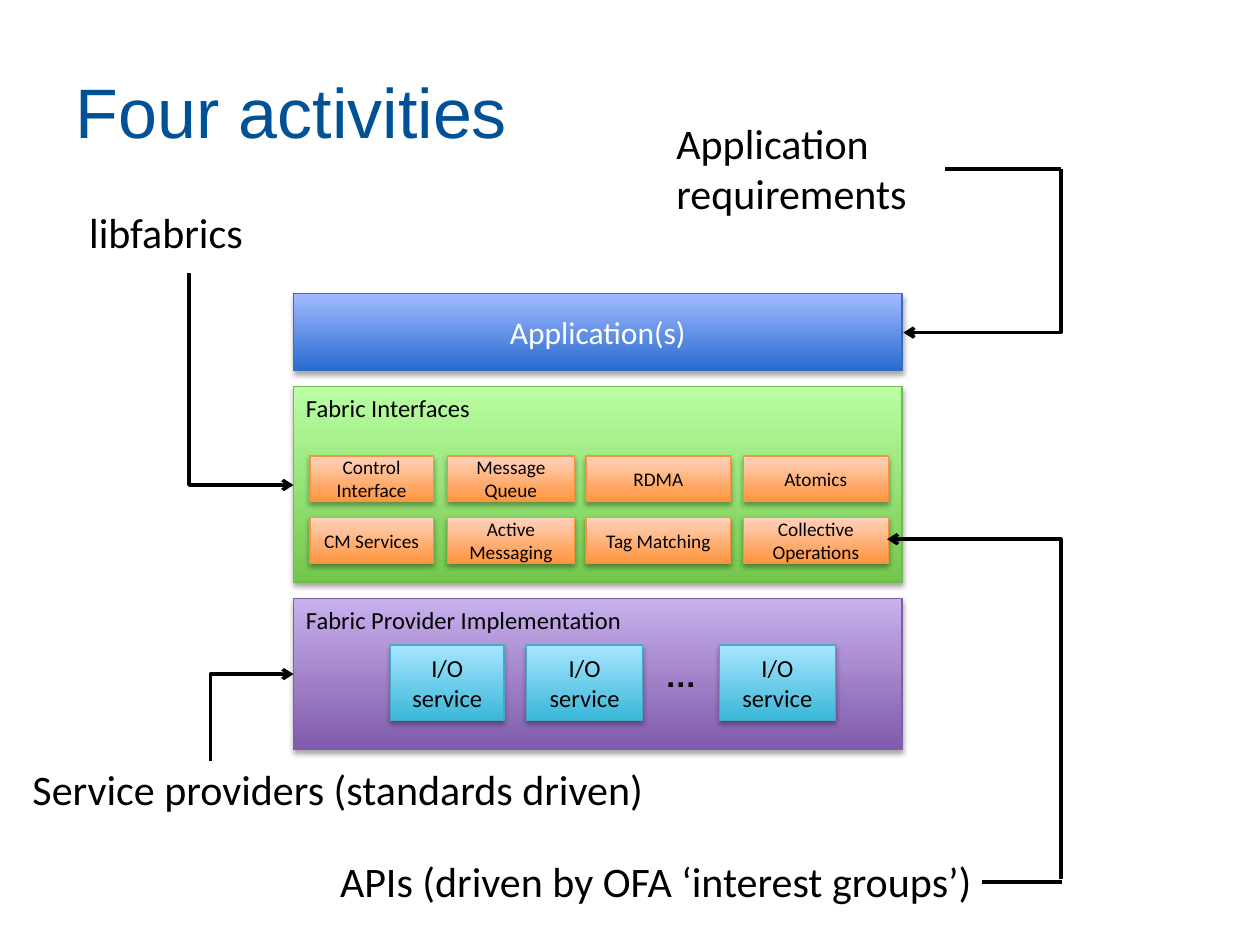
from lxml import etree
from pptx import Presentation
from pptx.dml.color import RGBColor
from pptx.enum.shapes import MSO_CONNECTOR as CONN, MSO_SHAPE
from pptx.enum.text import MSO_ANCHOR as ANCHOR, PP_ALIGN as ALIGN
from pptx.oxml import parse_xml
from pptx.oxml.ns import nsdecls, qn
from pptx.util import Inches, Pt

TITLE = "Four activities"
LABELS = [
    ("libfabrics", 0.61, 1.59, 1.73, 0.58),
    ("APIs (driven by OFA ‘interest groups’)", 2.6, 6.74, 5.29, 0.7),
    ("Application requirements", 5.27, 0.88, 2.23, 0.92),
    ("Service providers (standards driven)", 0.16, 6.01, 7.07, 0.58),
]
STYLES = {
    "application": ("296BD0", "A2BAFF", "386CBC"),
    "interfaces": ("73C74B", "BAFFA4", "75B755"),
    "provider": ("7F5BAB", "C8B0ED", "7D60A0"),
    "service": ("39B7D8", "A7E6FF", "46AAC5"),
    "api": ("FF953E", "FFD2BD", "F69240"),
}
LAYER_X, LAYER_W = 2.33, 4.83
LAYERS = [
    ("Fabric Interfaces", "interfaces", 3.07, 1.55),
    ("Fabric Provider Implementation", "provider", 4.75, 1.2),
]
SERVICES = [(3.1, 0.9), (4.18, 0.92), (5.71, 0.92)]
API_COLUMNS = [(2.46, 0.98), (3.55, 1.01), (4.65, 1.15), (5.9, 1.15)]
API_ROWS = [
    (3.62, ["Control\nInterface", "Message Queue", "RDMA", "Atomics"]),
    (4.11, ["CM Services", "Active Messaging", "Tag Matching", "Collective Operations"]),
]
ELBOWS = [
    ((7.17, 2.64), (8.42, 1.34)),
    ((2.33, 3.85), (1.5, 2.17)),
    ((2.33, 5.35), (1.67, 6.04)),
    ((7.04, 4.28), (8.42, 6.98)),
]
LINES = [((7.5, 1.34), (8.42, 1.34)), ((8.43, 7), (7.79, 7))]
SHADOW = (
    f'<a:effectLst {nsdecls("a")}><a:outerShdw blurRad="39370" dist="22860" dir="5400000" '
    'rotWithShape="0"><a:srgbClr val="000000"><a:alpha val="35000"/></a:srgbClr>'
    "</a:outerShdw></a:effectLst>"
)


def rgb(value):
    return RGBColor.from_string(value)


def write(tf, text, size, color="000000", font="Calibri", align=ALIGN.LEFT, bold=False):
    tf.text = text
    for p in tf.paragraphs:
        p.alignment = align
        for r in p.runs:
            r.font.size, r.font.name, r.font.bold = Pt(size), font, bold
            r.font.color.rgb = rgb(color)


def add_box(shapes, text, style, x, y, w, h, size, color="000000", centered=True):
    bottom, top, edge = STYLES[style]
    sp = shapes.add_shape(MSO_SHAPE.RECTANGLE, *map(Inches, (x, y, w, h)))
    sp.fill.gradient()
    sp.fill.gradient_angle = 90
    for stop, value in zip(sp.fill.gradient_stops, (bottom, top)):
        stop.color.rgb = rgb(value)
    sp.line.color.rgb = rgb(edge)
    sp.line.width = Pt(0.75)
    sp._element.spPr.append(parse_xml(SHADOW))
    tf = sp.text_frame
    tf.vertical_anchor = ANCHOR.MIDDLE if centered else ANCHOR.TOP
    write(tf, text, size, color, align=ALIGN.CENTER if centered else ALIGN.LEFT)


def add_text(shapes, text, x, y, w, h, size, wrap=True, **style):
    tf = shapes.add_textbox(*map(Inches, (x, y, w, h))).text_frame
    tf.word_wrap = wrap
    write(tf, text, size, **style)


def add_line(shapes, start, end, kind=CONN.STRAIGHT):
    cn = shapes.add_connector(kind, *map(Inches, start + end))
    cn.line.color.rgb = rgb("000000")
    cn.line.width = Pt(2)
    etree.SubElement(cn._element.spPr, qn("a:effectLst"))
    return cn


def add_elbow(shapes, tip, label_end):
    cn = add_line(shapes, tip, label_end, CONN.ELBOW)
    cn._element.spPr.find(qn("a:prstGeom")).set("prst", "bentConnector2")
    etree.SubElement(cn.line._get_or_add_ln(), qn("a:headEnd")).set("type", "arrow")


def main():
    prs = Presentation()
    prs.slide_width, prs.slide_height = Inches(10), Inches(7.5)
    s = prs.slides.add_slide(prs.slide_layouts[5])
    shapes = s.shapes

    title = shapes.title
    title.left, title.top, title.width, title.height = map(Inches, (0.5, 0.25, 8.17, 1.25))
    title.text_frame.vertical_anchor = ANCHOR.MIDDLE
    write(title.text_frame, TITLE, 40, "005195", "Arial")

    for text, style, y, h in LAYERS:
        add_box(shapes, text, style, LAYER_X, y, LAYER_W, h, 14, centered=False)
    add_box(shapes, "Application(s)", "application", LAYER_X, 2.33, LAYER_W, 0.61, 18, "FFFFFF")
    for x, w in SERVICES:
        add_box(shapes, "I/O service", "service", x, 5.12, w, 0.6, 14)
    add_text(shapes, "…", 5.18, 5.16, 0.45, 0.4, 18, wrap=False, font="Arial", bold=True)
    for y, names in API_ROWS:
        for name, (x, w) in zip(names, API_COLUMNS):
            add_box(shapes, name, "api", x, y, w, 0.36, 11)

    for text, *place in LABELS:
        add_text(shapes, text, *place, 24)
    for tip, label_end in ELBOWS:
        add_elbow(shapes, tip, label_end)
    for start, end in LINES:
        add_line(shapes, start, end)

    prs.save("out.pptx")


if __name__ == "__main__":
    main()
